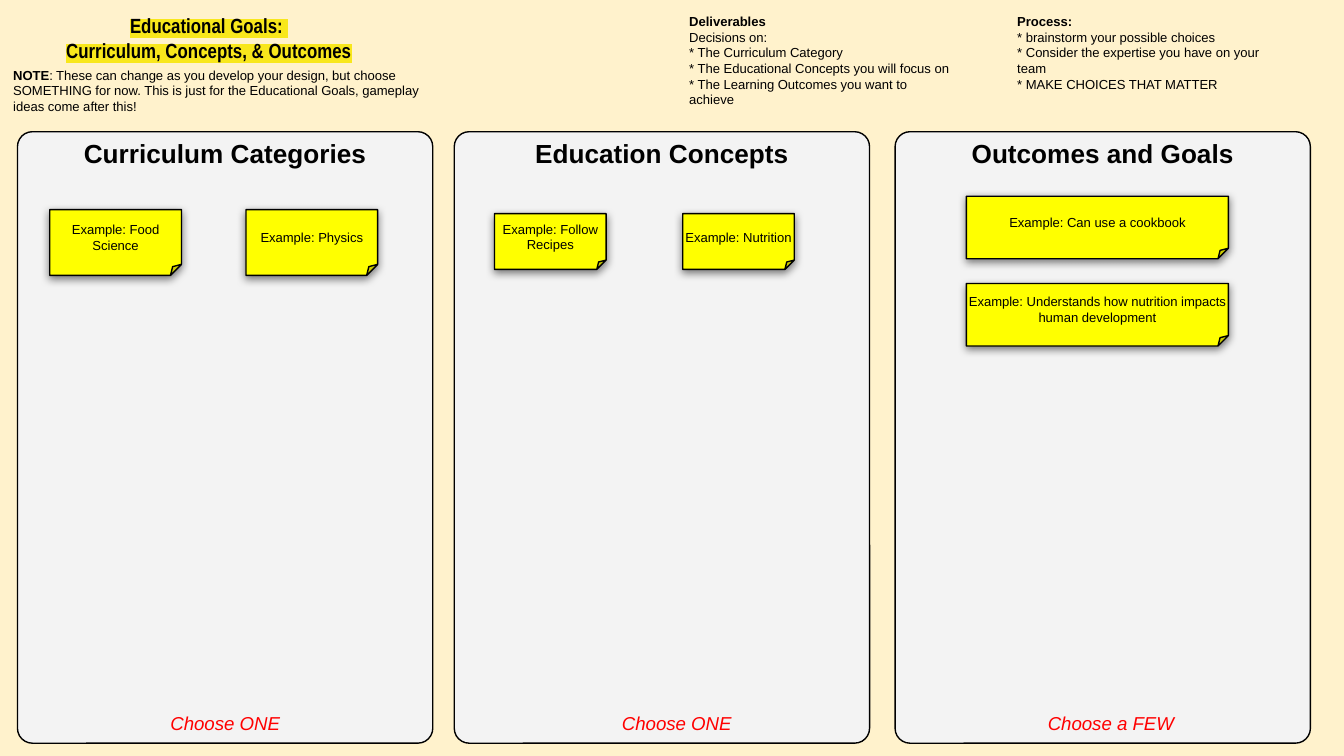
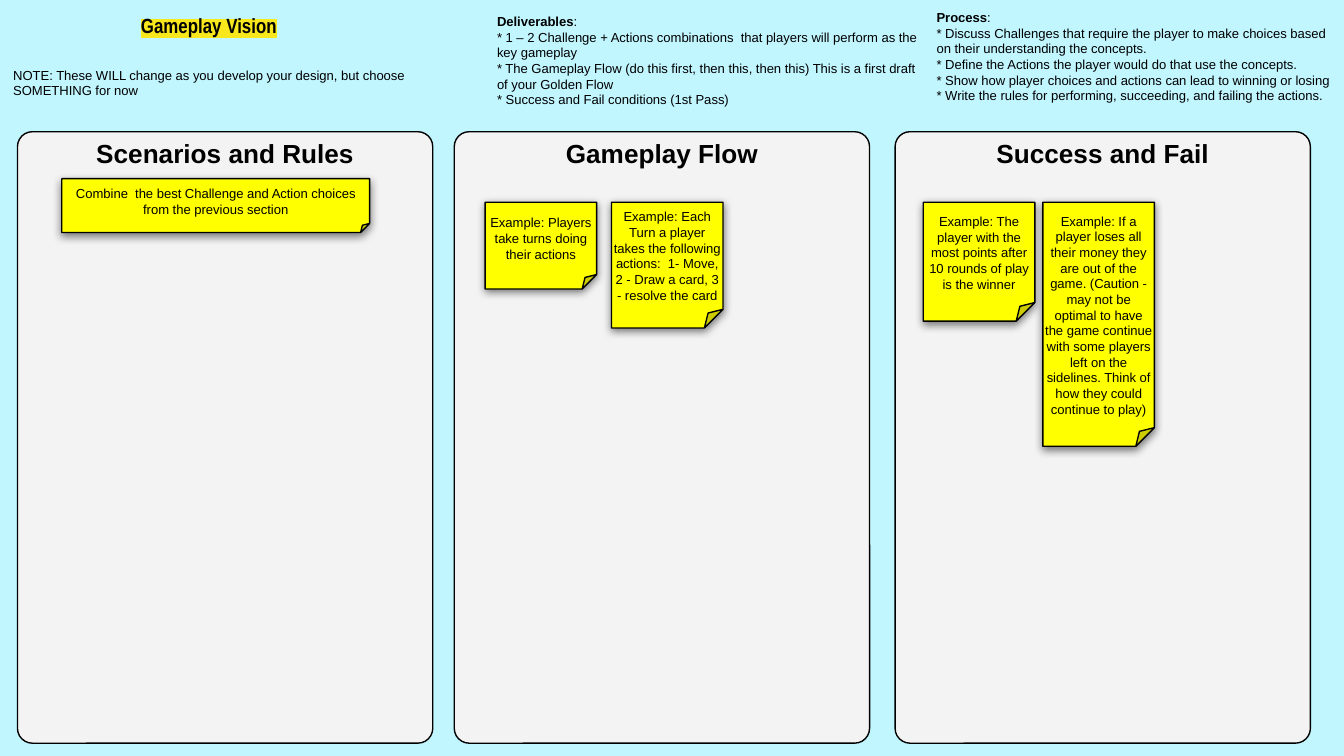
from lxml import etree
from pptx import Presentation
from pptx.dml.color import RGBColor
from pptx.enum.shapes import MSO_SHAPE as SHAPE
from pptx.enum.text import MSO_ANCHOR as ANCHOR, MSO_AUTO_SIZE as AUTO, PP_ALIGN as ALIGN
from pptx.oxml.ns import qn
from pptx.util import Inches, Pt

prs = Presentation()
prs.slide_width, prs.slide_height = Inches(10), Inches(5.625)
COL, ROW = prs.slide_width / 100, prs.slide_height / 100

PANEL_X, PANEL_Y, PANEL_W, PANEL_H = (1.3, 33.8, 66.6), 17.42, 30.9, 80.89
CHOICE_X = (3.2, 36.8, 69.1)
EVEN = (0.1, 0.1, 0.1, 0.1)
HEAD = (0.1, 0.1, 0.01, 0.01)
NOTE = (0.1, 0.01, 0.01, 0.01)
TIGHT = (0.01, 0.01, 0.01, 0.01)


def rgb(value):
    return RGBColor.from_string(value)


def add_text(s, text, x, y, w, h, lead="", shape=None, fill=None, adj=None, shadow=False,
             ins=EVEN, anchor=ANCHOR.TOP, align=ALIGN.LEFT, size=7, font="Arial",
             color="000000", bold=False, italic=False, highlight=None):
    box = [round(v) for v in (x * COL, y * ROW, w * COL, h * ROW)]
    if shape is None:
        sp = s.shapes.add_textbox(*box)
    else:
        sp = s.shapes.add_shape(shape, *box)
        sp.fill.solid()
        sp.fill.fore_color.rgb = rgb(fill)
        sp.line.color.rgb = rgb("000000")
        sp.line.width = Pt(0.75)
        sp.shadow.inherit = False
    if adj is not None:
        sp.adjustments[0] = adj
    if shadow:
        effects = sp._element.spPr.find(qn("a:effectLst"))
        outer = etree.SubElement(effects, qn("a:outerShdw"), blurRad=str(int(Pt(4.5))),
                                 dist=str(int(Pt(1.5))), dir="5400000", algn="bl",
                                 rotWithShape="0")
        black = etree.SubElement(outer, qn("a:srgbClr"), val="000000")
        etree.SubElement(black, qn("a:alpha"), val="50000")
    tf = sp.text_frame
    tf.word_wrap = True
    tf.auto_size = AUTO.SHAPE_TO_FIT_TEXT if shape is None else AUTO.NONE
    tf.vertical_anchor = anchor
    tf.margin_left, tf.margin_top, tf.margin_right, tf.margin_bottom = map(Inches, ins)
    for i, line in enumerate(text.split("\n")):
        p = tf.add_paragraph() if i else tf.paragraphs[0]
        p.alignment = align
        runs = [(line, bold)] if i else [(lead, True), (line, bold)]
        for words, strong in runs:
            if not words:
                continue
            r = p.add_run()
            r.text = words
            r.font.size, r.font.name = Pt(size), font
            r.font.bold, r.font.italic = strong, italic
            r.font.color.rgb = rgb(color)
            if highlight:
                mark = etree.Element(qn("a:highlight"))
                etree.SubElement(mark, qn("a:srgbClr"), val=highlight)
                r._r.get_or_add_rPr().find(qn("a:solidFill")).addnext(mark)


slides = [
    dict(
        bg="FFF2CC",
        title="Educational Goals: \nCurriculum, Concepts, & Outcomes",
        title_h=8.53,
        heads=[
            ("Deliverables", "\nDecisions on:\n* The Curriculum Category\n"
             "* The Educational Concepts you will focus on\n"
             "* The Learning Outcomes you want to achieve", 50.3, 0, 21.5, 16.18, EVEN),
            ("Process:", "\n* brainstorm your possible choices\n"
             "* Consider the expertise you have on your team\n"
             "* MAKE CHOICES THAT MATTER", 74.7, 0, 21.5, 14.04, EVEN),
            ("NOTE", ": These can change as you develop your design, but choose SOMETHING for now. "
             "This is just for the Educational Goals, gameplay ideas come after this!",
             0, 8.71, 32.2, 6.58, NOTE),
        ],
        panels=["Curriculum Categories", "Education Concepts", "Outcomes and Goals"],
        choices=["Choose ONE", "Choose ONE", "Choose a FEW"],
        stickies=[
            ("Example: Follow Recipes", 36.8, 28.27, 8.3, 7.38),
            ("Example: Nutrition", 50.8, 28.27, 8.3, 7.38),
            ("Example: Can use a cookbook", 71.9, 25.96, 19.5, 8.27),
            ("Example: Understands how nutrition impacts human development", 71.9, 37.51, 19.5, 8.27),
            ("Example: Physics", 18.3, 27.73, 9.8, 8.71),
            ("Example: Food Science", 3.7, 27.73, 9.8, 8.71),
        ],
    ),
    dict(
        bg="C2F6FF",
        title="Gameplay Vision",
        title_h=5.33,
        heads=[
            ("Deliverables", ":\n* 1 – 2 Challenge + Actions combinations  that players will perform "
             "as the key gameplay\n* The Gameplay Flow (do this first, then this, then this) "
             "This is a first draft of your Golden Flow\n"
             "* Success and Fail conditions (1st Pass)", 36, 0, 33, 14.58, HEAD),
            ("Process", ":\n* Discuss Challenges that require the player to make choices based on "
             "their understanding the concepts.\n"
             "* Define the Actions the player would do that use the concepts.\n"
             "* Show how player choices and actions can lead to winning or losing\n"
             "* Write the rules for performing, succeeding, and failing the actions.",
             68.7, -0.53, 30.9, 14.58, HEAD),
            ("", "NOTE: These WILL change as you develop your design, but choose SOMETHING for now",
             0, 8.71, 30.9, 4.62, NOTE),
        ],
        panels=["Scenarios and Rules", "Gameplay Flow", "Success and Fail"],
        choices=[],
        stickies=[
            ("Combine  the best Challenge and Action choices from the previous section",
             4.6, 23.64, 22.9, 7.11),
            ("Example: Players take turns doing their actions", 36.1, 26.76, 8.3, 11.47),
            ("Example: Each Turn a player takes the following actions:  1- Move, "
             "2 - Draw a card, 3 - resolve the card", 45.5, 26.76, 8.3, 16.62),
            ("Example: The player with the most points after 10 rounds of play is the winner",
             68.7, 26.76, 8.3, 15.73),
            ("Example: If a player loses all their money they are out of the game. "
             "(Caution - may not be optimal to have the game continue with some players left "
             "on the sidelines. Think of how they could continue to play)", 77.6, 26.76, 8.3, 32.27),
        ],
    ),
]

for d in slides:
    s = prs.slides.add_slide(prs.slide_layouts[6])
    s.background.fill.solid()
    s.background.fill.fore_color.rgb = rgb(d["bg"])
    add_text(s, d["title"], 0, 0, 30.2, d["title_h"], ins=HEAD, align=ALIGN.CENTER,
             size=11, font="Arial Narrow", bold=True, highlight="F8E71C")
    for lead, text, x, y, w, h, ins in d["heads"]:
        add_text(s, text, x, y, w, h, lead=lead, ins=ins)
    for x, text in zip(PANEL_X, d["panels"]):
        add_text(s, text, x, PANEL_Y, PANEL_W, PANEL_H, shape=SHAPE.ROUNDED_RECTANGLE,
                 fill="F3F3F3", adj=0.036, ins=(0.1, 0.01, 0.1, 0.1),
                 align=ALIGN.CENTER, size=14, bold=True)
    for x, text in zip(CHOICE_X, d["choices"]):
        add_text(s, text, x, 93.33, 27.1, 4.8, ins=(0.1, 0.05, 0.1, 0.05),
                 align=ALIGN.CENTER, size=10, color="FF0000", italic=True)
    for text, x, y, w, h in d["stickies"]:
        add_text(s, text, x, y, w, h, shape=SHAPE.FOLDED_CORNER, fill="FFFF00",
                 shadow=True, ins=TIGHT, anchor=ANCHOR.MIDDLE, align=ALIGN.CENTER)

prs.save("out.pptx")
